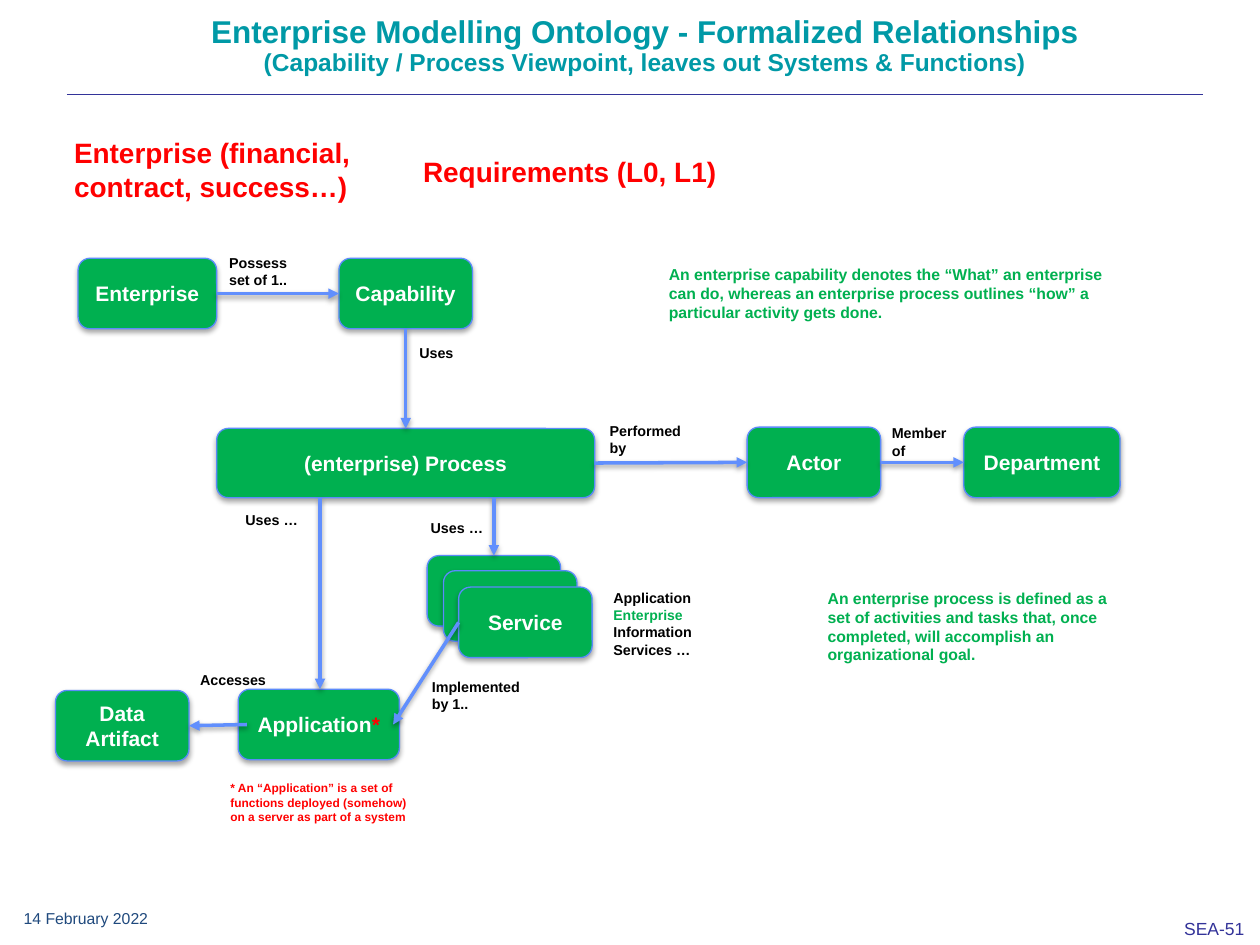
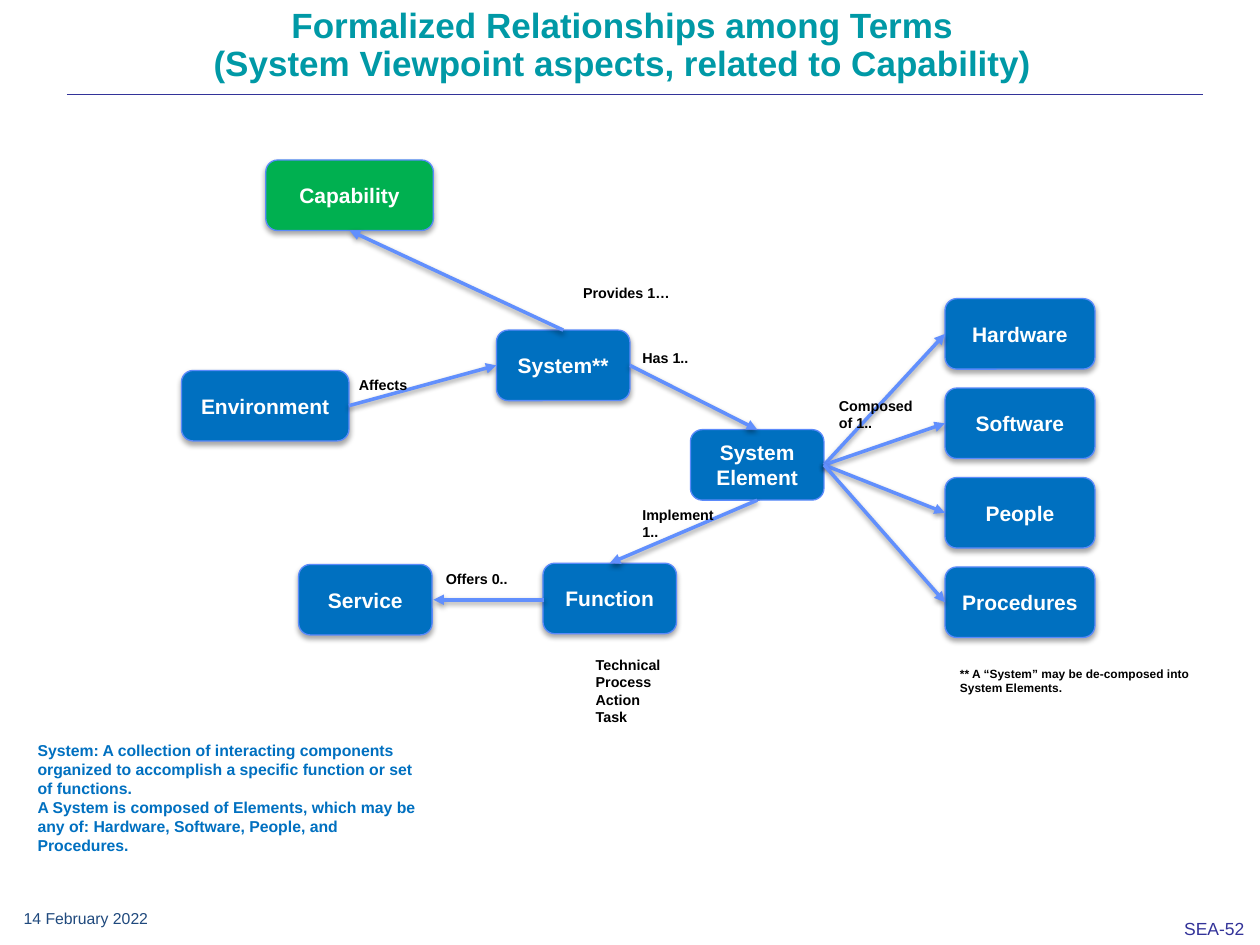
from lxml import etree
from pptx import Presentation
from pptx.dml.color import RGBColor
from pptx.enum.shapes import MSO_CONNECTOR as Wire, MSO_SHAPE as Kind
from pptx.enum.text import MSO_ANCHOR as Anchor, PP_ALIGN as Align
from pptx.oxml import parse_xml
from pptx.oxml.ns import nsdecls, qn
from pptx.util import Inches, Pt

TEAL = RGBColor(0x00, 0x99, 0xA6)
GREEN = RGBColor(0x00, 0xB0, 0x50)
BLUE = RGBColor(0x00, 0x70, 0xC0)
EDGE = RGBColor(0x5B, 0x8A, 0xFB)
ARROW = RGBColor(0x61, 0x8F, 0xFD)
INDIGO = RGBColor(0x33, 0x33, 0x99)
NAVY = RGBColor(0x1F, 0x49, 0x7D)
RED = RGBColor(0xFF, 0x00, 0x00)
BLACK = RGBColor(0x00, 0x00, 0x00)
WHITE = RGBColor(0xFF, 0xFF, 0xFF)

FONT = "Arial"
TOP, LEFT, FOOT, RIGHT = range(4)  # connection sites of a box
W, H = 1.06, 0.56  # usual box size


def write(frame, text, size, hue, align=Align.LEFT, bold=True):
    frame.word_wrap = True
    for i, line in enumerate(text.split("\n")):
        para = frame.paragraphs[0] if i == 0 else frame.add_paragraph()
        para.alignment = align
        run = para.add_run()
        run.text = line
        run.font.name = FONT
        run.font.size = Pt(size)
        run.font.bold = bold
        run.font.color.rgb = hue


def note(slide, x, y, w, h, text, size, hue, align=Align.LEFT, bold=True):
    box = slide.shapes.add_textbox(Inches(x), Inches(y), Inches(w), Inches(h))
    write(box.text_frame, text, size, hue, align, bold)
    return box.text_frame


# Content: boxes are (text, x, y, w, h, fill), links join box sites,
# free arrows and labels carry coordinates
enterprise = dict(
    page="SEA-51",
    title=(0.62, 0.08, 9, 0.8, "Enterprise Modelling Ontology - Formalized Relationships\n"
           "(Capability / Process Viewpoint, leaves out Systems & Functions)"),
    sizes=(18, 14),
    boxes=[
        ("Enterprise", 0.62, 2.05, 1.1, H, GREEN),
        ("Capability", 2.69, 2.05, W, H, GREEN),
        ("(enterprise) Process", 1.72, 3.4, 3, 0.55, GREEN),
        ("Actor", 5.93, 3.39, W, H, GREEN),
        ("Department", 7.65, 3.39, 1.24, H, GREEN),
        ("", 3.39, 4.41, W, H, GREEN),
        ("", 3.52, 4.53, W, H, GREEN),
        ("Service", 3.64, 4.66, W, H, GREEN),
        ("Application", 1.89, 5.47, 1.28, H, GREEN),
        ("Data Artifact", 0.44, 5.48, W, H, GREEN),
    ],
    links=[
        ("Enterprise", RIGHT, "Capability", LEFT),
        ("Capability", FOOT, "(enterprise) Process", TOP),
        ("(enterprise) Process", RIGHT, "Actor", LEFT),
        ("Actor", RIGHT, "Department", LEFT),
    ],
    free=[
        (2.54, 3.95, 2.54, 5.47),
        (3.92, 3.95, 3.92, 4.41),
        (3.64, 4.94, 3.12, 5.75),
        (1.96, 5.75, 1.5, 5.76),
    ],
    labels=[
        (1.72, 1.97, 0.75, 0.38, "Possess set of 1.."),
        (3.23, 2.68, 0.84, 0.24, "Uses"),
        (4.74, 3.3, 0.91, 0.38, "Performed\nby"),
        (6.98, 3.32, 0.91, 0.38, "Member\nof"),
        (1.85, 4.01, 0.84, 0.24, "Uses …"),
        (3.32, 4.07, 0.75, 0.24, "Uses …"),
        (3.33, 5.33, 0.93, 0.38, "Implemented by 1.."),
        (1.49, 5.28, 0.84, 0.24, "Accesses"),
    ],
    notes=[
        (0.49, 1.03, 2.73, 0.64, "Enterprise (financial, contract, success…)", 16, RED),
        (3.26, 1.18, 2.73, 0.37, "Requirements (L0, L1)", 16, RED),
        (5.21, 2.05, 3.88, 0.56, "An enterprise capability denotes the “What” an enterprise can do, "
         "whereas an enterprise process outlines “how” a particular activity gets done.", 9, GREEN),
        (6.47, 4.62, 2.42, 0.71, "An enterprise process is defined as a set of activities and tasks "
         "that, once completed, will accomplish an organizational goal.", 9, GREEN),
        (1.73, 6.15, 1.73, 0.44, "* An “Application” is a set of functions deployed (somehow) on "
         "a server as part of a system", 6.8, RED),
    ],
)

parts = ["Hardware", "Software", "People", "Procedures"]
system = dict(
    page="SEA-52",
    title=(0.44, 0.02, 9, 0.84, "Formalized Relationships among Terms\n"
           "(System Viewpoint aspects, related to Capability)"),
    sizes=(20, 20),
    boxes=[
        ("Capability", 2.11, 1.27, 1.33, H, GREEN),
        ("Environment", 1.44, 2.94, 1.33, H, BLUE),
        ("System**", 3.94, 2.62, W, H, BLUE),
        ("System\nElement", 5.48, 3.41, W, H, BLUE),
        ("Function", 4.31, 4.47, W, H, BLUE),
        ("Service", 2.37, 4.48, W, H, BLUE),
    ] + [(part, 7.5, 2.37 + 0.71 * i, 1.19, H, BLUE) for i, part in enumerate(parts)],
    links=[
        ("System**", TOP, "Capability", FOOT),
        ("Environment", RIGHT, "System**", LEFT),
        ("System**", RIGHT, "System\nElement", TOP),
        ("System\nElement", FOOT, "Function", TOP),
    ] + [("System\nElement", RIGHT, part, LEFT) for part in parts],
    free=[(4.32, 4.76, 3.44, 4.76)],
    labels=[
        (4.53, 2.21, 1.06, 0.24, "Provides 1…"),
        (5, 2.72, 0.75, 0.24, "Has 1.."),
        (2.75, 2.94, 0.84, 0.24, "Affects"),
        (6.56, 3.1, 0.79, 0.38, "Composed of 1.."),
        (5, 3.97, 0.8, 0.38, "Implement 1.."),
        (3.44, 4.48, 0.75, 0.24, "Offers 0.."),
        (4.63, 5.16, 1.17, 0.66, "Technical Process\nAction\nTask"),
    ],
    notes=[
        (7.52, 5.24, 2.06, 0.33, "** A “System” may be de-composed into System Elements.",
         6.8, BLACK),
        (0.2, 5.83, 3.24, 1.01, "System: A collection of interacting components organized to "
         "accomplish a specific function or set of functions.\nA System is composed of Elements, "
         "which may be any of: Hardware, Software, People, and Procedures.", 9, BLUE),
    ],
)

deck = Presentation()
deck.slide_width, deck.slide_height = Inches(10), Inches(7.5)

for view in (enterprise, system):
    slide = deck.slides.add_slide(deck.slide_layouts[6])
    shapes = slide.shapes

    # Title, rule and footer
    head = note(slide, *view["title"], 20, TEAL, Align.CENTER)
    for para, size in zip(head.paragraphs, view["sizes"]):
        para.line_spacing = 0.9
        para.runs[0].font.size = Pt(size)
    rule = shapes.add_connector(Wire.STRAIGHT, Inches(0.53), Inches(0.75),
                                Inches(9.55), Inches(0.75))
    rule.line.color.rgb = INDIGO
    rule.line.width = Pt(0.13)
    etree.SubElement(rule._element.spPr, qn("a:effectLst"))
    note(slide, 9.3, 7.24, 0.7, 0.26, view["page"], 10, INDIGO, bold=False)
    date = note(slide, 0.09, 7.15, 1.3, 0.28, "14 February 2022", 9, NAVY, bold=False)
    date.vertical_anchor = Anchor.MIDDLE

    # Boxes
    cards = {}
    cast = []
    for text, x, y, w, h, fill in view["boxes"]:
        card = shapes.add_shape(Kind.ROUNDED_RECTANGLE, Inches(x), Inches(y),
                                Inches(w), Inches(h))
        card.shadow.inherit = False
        card.fill.solid()
        card.fill.fore_color.rgb = fill
        card.line.color.rgb = EDGE
        card.line.width = Pt(0.75)
        card.text_frame.vertical_anchor = Anchor.MIDDLE
        if text:
            write(card.text_frame, text, 12, WHITE, Align.CENTER)
        cards[text] = card
        if text != "System\nElement":
            cast.append((card, 35))

    # Arrows
    wires = []
    for start, out, end, into in view["links"]:
        wire = shapes.add_connector(Wire.STRAIGHT, 0, 0, 0, 0)
        wire.begin_connect(cards[start], out)
        wire.end_connect(cards[end], into)
        wires.append(wire)
    for ends in view["free"]:
        wires.append(shapes.add_connector(Wire.STRAIGHT, *map(Inches, ends)))
    for wire in wires:
        wire.line.color.rgb = ARROW
        wire.line.width = Pt(2)
        etree.SubElement(wire.line._get_or_add_ln(), qn("a:tailEnd"), type="triangle")
        etree.SubElement(wire._element.spPr, qn("a:effectLst"))
        cast.append((wire, 38))

    # Soft shadows under boxes and arrows
    for shape, alpha in cast:
        drop = 1.8 if alpha == 35 else 1.6
        shape._element.spPr.find(qn("a:effectLst")).append(parse_xml(
            f'<a:outerShdw {nsdecls("a")} blurRad="{Pt(3.1)}" dist="{Pt(drop)}" '
            f'dir="5400000" rotWithShape="0"><a:srgbClr val="000000">'
            f'<a:alpha val="{alpha * 1000}"/></a:srgbClr></a:outerShdw>'))

    # Labels and notes
    for label in view["labels"]:
        note(slide, *label, 8.2, BLACK)
    for item in view["notes"]:
        note(slide, *item)

    # Marked words of the enterprise view
    if view is enterprise:
        write(cards["Application"].text_frame, "*", 12, RED, Align.CENTER)
        kinds = note(slide, 4.77, 4.63, 0.83, 0.67,
                     "Application\nEnterprise\nInformation\nServices …", 8.2, BLACK)
        word = kinds.paragraphs[1].runs[0].font
        word.size = Pt(8)
        word.color.rgb = GREEN

deck.save("out.pptx")
